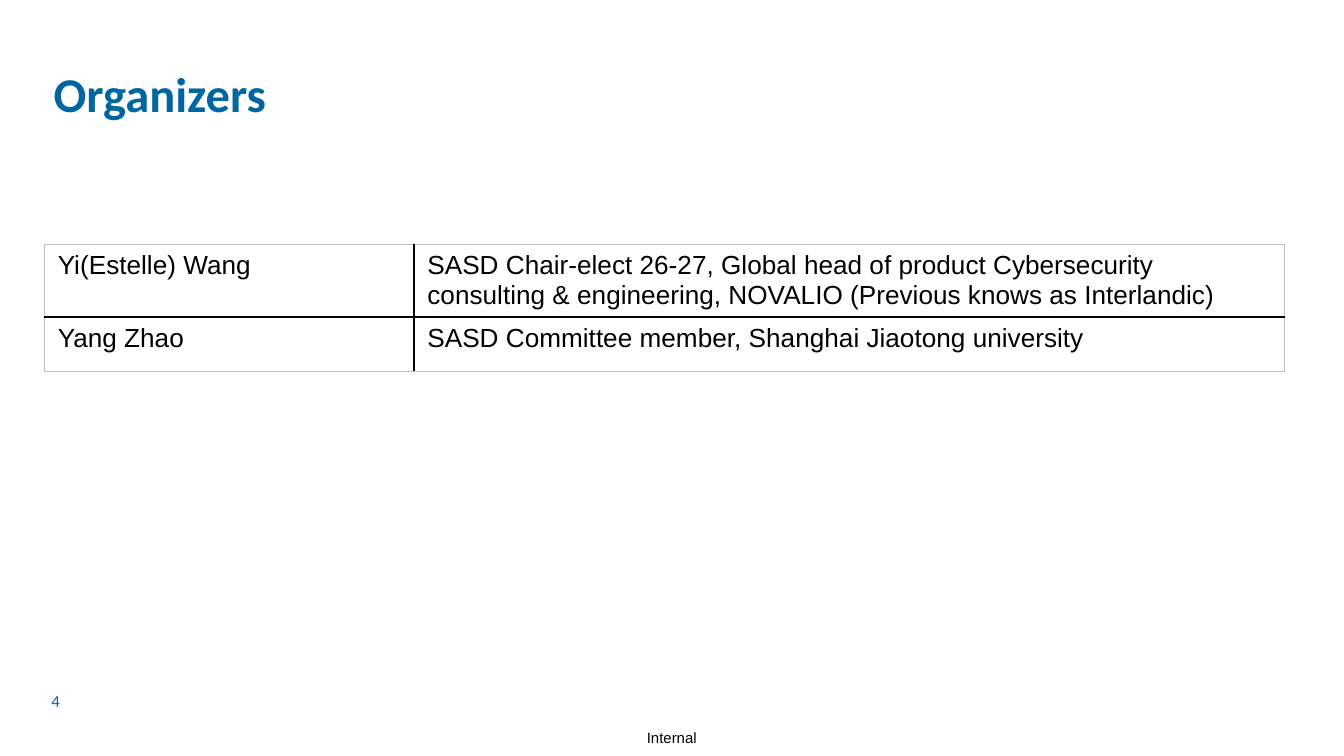
"""Build the Organizers slide with its table of names and roles."""
import pptx
import pptx.dml.color
import pptx.enum.text
import pptx.oxml
import pptx.oxml.ns
import pptx.util

Pt = pptx.util.Pt
COLORS = {"blue": "0066A1", "black": "000000", "white": "FFFFFF", "grey": "BFBFBF"}
ANCHOR = pptx.enum.text.MSO_ANCHOR


def write(frame, text, color, frame_format, **font_format):
    frame.text = text
    for name, value in frame_format.items():
        setattr(frame, name, value)
    font = frame.paragraphs[0].runs[0].font
    for name, value in font_format.items():
        setattr(font, name, value)
    font.color.rgb = pptx.dml.color.RGBColor.from_string(COLORS[color])


def add_border(cell, position, side, color, width):
    line = pptx.oxml.parse_xml(
        f'<a:ln{side} {pptx.oxml.ns.nsdecls("a")} w="{Pt(width)}"><a:solidFill>'
        f'<a:srgbClr val="{COLORS[color]}"/></a:solidFill></a:ln{side}>'
    )
    cell._tc.get_or_add_tcPr().insert(position, line)


deck = pptx.Presentation()
deck.slide_width, deck.slide_height = Pt(720), Pt(405)
slide = deck.slides.add_slide(deck.slide_layouts[5])

heading = slide.shapes.title
heading.left, heading.top, heading.width, heading.height = Pt(23.75), Pt(33), Pt(672), Pt(31)
heading_format = {
    "margin_left": Pt(5), "margin_right": Pt(5), "margin_top": Pt(5), "margin_bottom": Pt(5),
    "vertical_anchor": ANCHOR.TOP, "word_wrap": True,
    "auto_size": pptx.enum.text.MSO_AUTO_SIZE.NONE,
}
write(heading.text_frame, "Organizers", "blue", heading_format,
      name="Calibri", size=Pt(26), bold=True)
heading.text_frame.paragraphs[0].alignment = pptx.enum.text.PP_ALIGN.LEFT
heading.text_frame.paragraphs[0].line_spacing = 0.9

organizers = [
    ("Yi(Estelle) Wang",
     "SASD Chair-elect 26-27, Global head of product Cybersecurity consulting "
     "& engineering, NOVALIO (Previous knows as Interlandic)"),
    ("Yang Zhao", "SASD Committee member, Shanghai Jiaotong university"),
]
roster = slide.shapes.add_table(2, 2, Pt(23.75), Pt(131), Pt(664.5), Pt(68)).table
for flag in ("first_row", "horz_banding"):
    setattr(roster, flag, False)
for column, width in zip(roster.columns, (198, 466.5)):
    column.width = Pt(width)
for row, height in zip(roster.rows, (39, 29)):
    row.height = Pt(height)

for r, organizer in enumerate(organizers):
    for c, entry in enumerate(organizer):
        cell = roster.cell(r, c)
        write(cell.text_frame, entry, "black", {}, name="Arial", size=Pt(14))
        cell.fill.solid()
        cell.fill.fore_color.rgb = pptx.dml.color.RGBColor.from_string(COLORS["white"])
        inner_sides = {"L": c == 1, "R": c == 0, "T": r == 1, "B": r == 0}
        for position, (side, inner) in enumerate(inner_sides.items()):
            add_border(cell, position, side, *(("black", 1) if inner else ("grey", 0.5)))

footers = [
    ("4", (22.5, 364.5, 121.5, 21.5), (5, 3), True, ANCHOR.MIDDLE, "blue", "Calibri", 9),
    ("Internal", (346.5, 390.5, 28.5, 9.5), (0, 0), False, ANCHOR.TOP, "black", "Arial", 8),
]
for text, place, (side_margin, end_margin), wrap, anchor, color, typeface, size in footers:
    footer = slide.shapes.add_textbox(*map(Pt, place))
    footer_format = {
        "margin_left": Pt(side_margin), "margin_right": Pt(side_margin),
        "margin_top": Pt(end_margin), "margin_bottom": Pt(end_margin),
        "word_wrap": wrap, "vertical_anchor": anchor,
    }
    write(footer.text_frame, text, color, footer_format, name=typeface, size=Pt(size))

deck.save("out.pptx")
